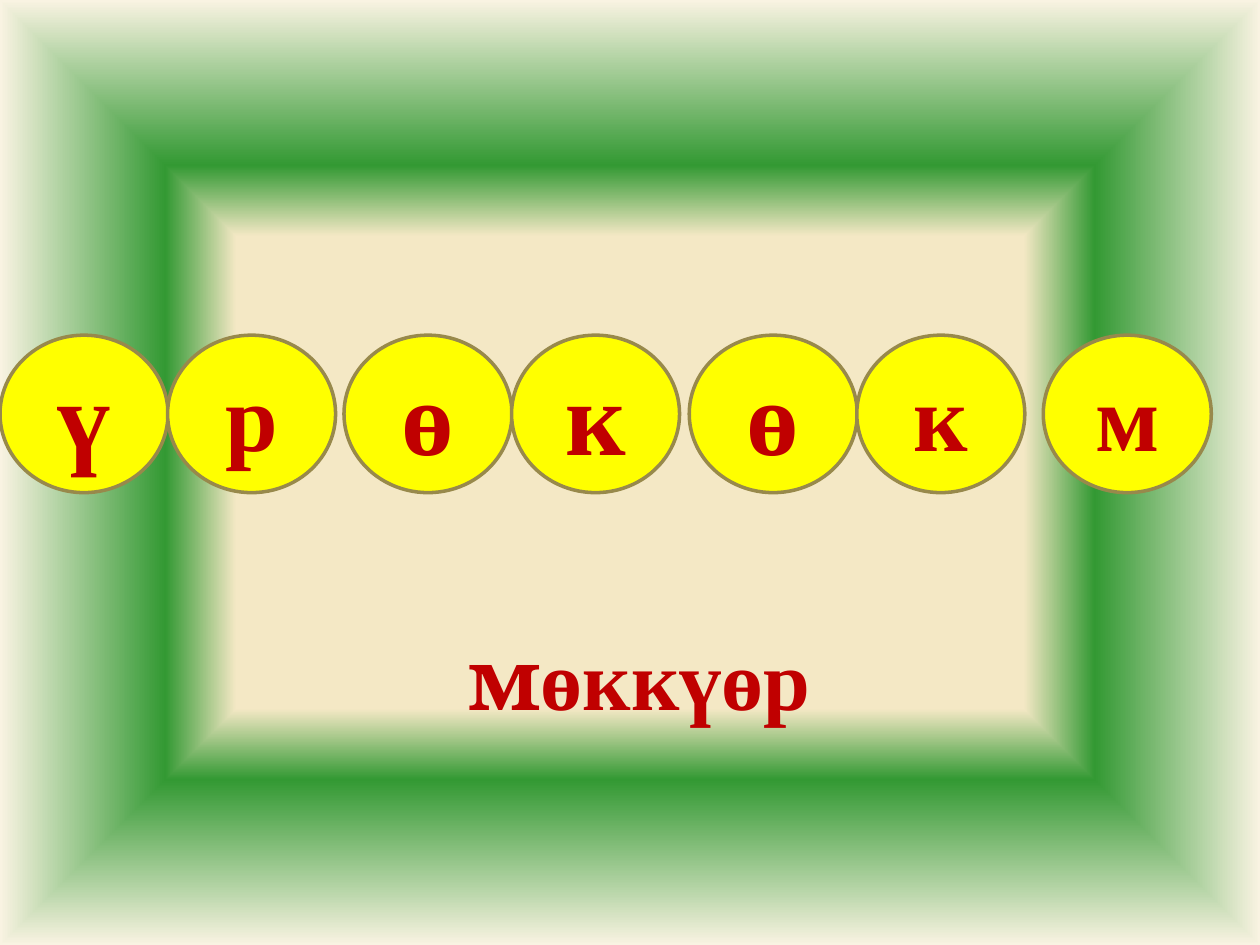
from pptx import Presentation
from pptx import util as u
from pptx.dml.color import RGBColor
from pptx.enum import shapes, text
from pptx.oxml import parse_xml
from pptx.oxml.ns import nsdecls

WIDTH, HEIGHT = 10, 7.5
COLORS = {
    "cream": "F4E8C5",
    "green": "339933",
    "pale": "F9F3E2",
    "yellow": "FFFF00",
    "olive": "98894B",
    "red": "C00000",
}
SERIF = "Times New Roman"
BACKGROUND_STOPS = [(50, "cream"), (65, "green"), (100, "pale")]

# Letter, left edge in inches, text size in points
LETTERS = [
    ("ү", 0, 60),
    ("р", 1.33, 54),
    ("ө", 2.73, 60),
    ("к", 4.06, 60),
    ("ө", 5.47, 60),
    ("к", 6.8, 54),
    ("м", 8.28, 54),
]
CIRCLE_TOP, CIRCLE_WIDTH, CIRCLE_HEIGHT = 2.66, WIDTH / 7.5, HEIGHT / 6


def color(name):
    return RGBColor.from_string(COLORS[name])


def inches(*lengths):
    return [u.Inches(length) for length in lengths]


def set_background(slide):
    stops = "".join(
        f'<a:gs pos="{share * 1000}"><a:srgbClr val="{COLORS[name]}"/></a:gs>'
        for share, name in BACKGROUND_STOPS
    )
    background = parse_xml(
        f'<p:bg {nsdecls("p", "a")}><p:bgPr><a:gradFill rotWithShape="1">'
        f'<a:gsLst>{stops}</a:gsLst><a:path path="shape">'
        '<a:fillToRect l="50000" t="50000" r="50000" b="50000"/></a:path>'
        '</a:gradFill><a:effectLst/></p:bgPr></p:bg>'
    )
    slide.element.cSld.insert(0, background)


def write(paragraph, words, size, font=SERIF, fill="red", bold=True):
    paragraph.alignment = text.PP_ALIGN.CENTER
    run = paragraph.add_run()
    run.text = words
    run.font.name = font
    run.font.size = u.Pt(size)
    run.font.bold = bold
    run.font.color.rgb = color(fill)


def add_letter_circle(slide, letter, left, size):
    box = inches(left, CIRCLE_TOP, CIRCLE_WIDTH, CIRCLE_HEIGHT)
    circle = slide.shapes.add_shape(shapes.MSO_SHAPE.OVAL, *box)
    circle.shadow.inherit = False
    circle.fill.solid()
    circle.fill.fore_color.rgb = color("yellow")
    circle.line.color.rgb = color("olive")
    circle.line.width = u.Pt(2)
    circle.text_frame.vertical_anchor = text.MSO_ANCHOR.MIDDLE
    write(circle.text_frame.paragraphs[0], letter, size)


def add_answer(slide):
    answer = slide.shapes.add_textbox(*inches(3.12, 4.92, 3.91, 0.91))
    answer.text_frame.word_wrap = True
    answer.text_frame.auto_size = text.MSO_AUTO_SIZE.SHAPE_TO_FIT_TEXT
    paragraph = answer.text_frame.paragraphs[0]
    write(paragraph, "м", 48, font="Cambria")
    write(paragraph, "өккүөр", 48)


def main():
    presentation = Presentation()
    presentation.slide_width, presentation.slide_height = inches(WIDTH, HEIGHT)
    slide = presentation.slides.add_slide(presentation.slide_layouts[6])
    set_background(slide)

    # Row of scrambled letters
    for letter, left, size in LETTERS:
        add_letter_circle(slide, letter, left, size)

    # Unscrambled word
    add_answer(slide)
    presentation.save("out.pptx")


if __name__ == "__main__":
    main()
